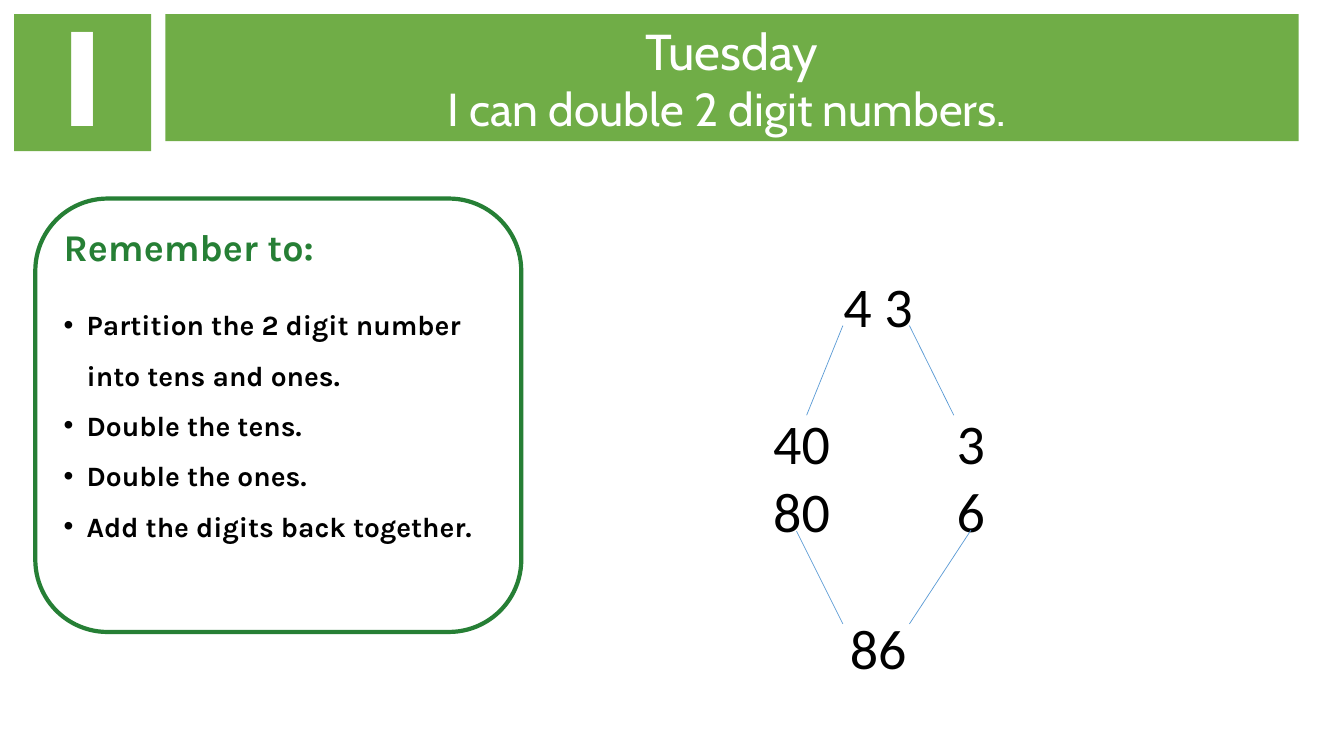
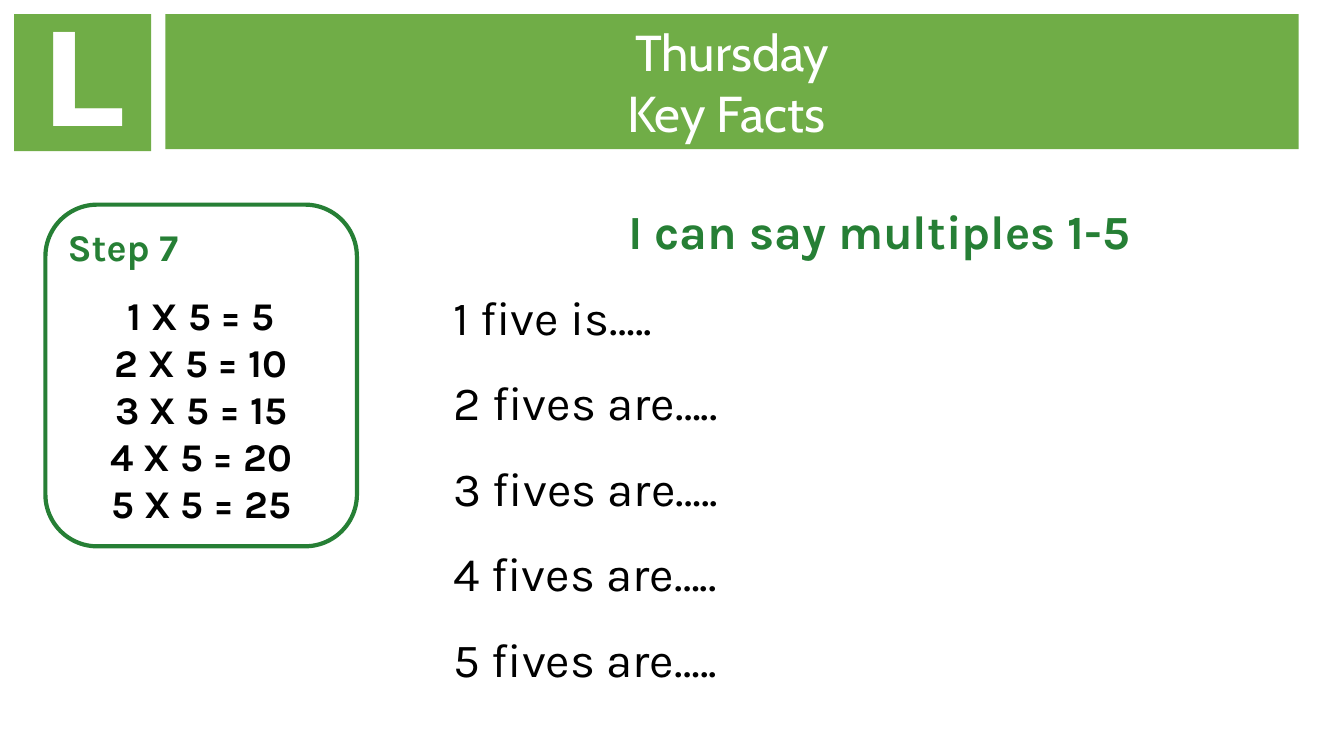
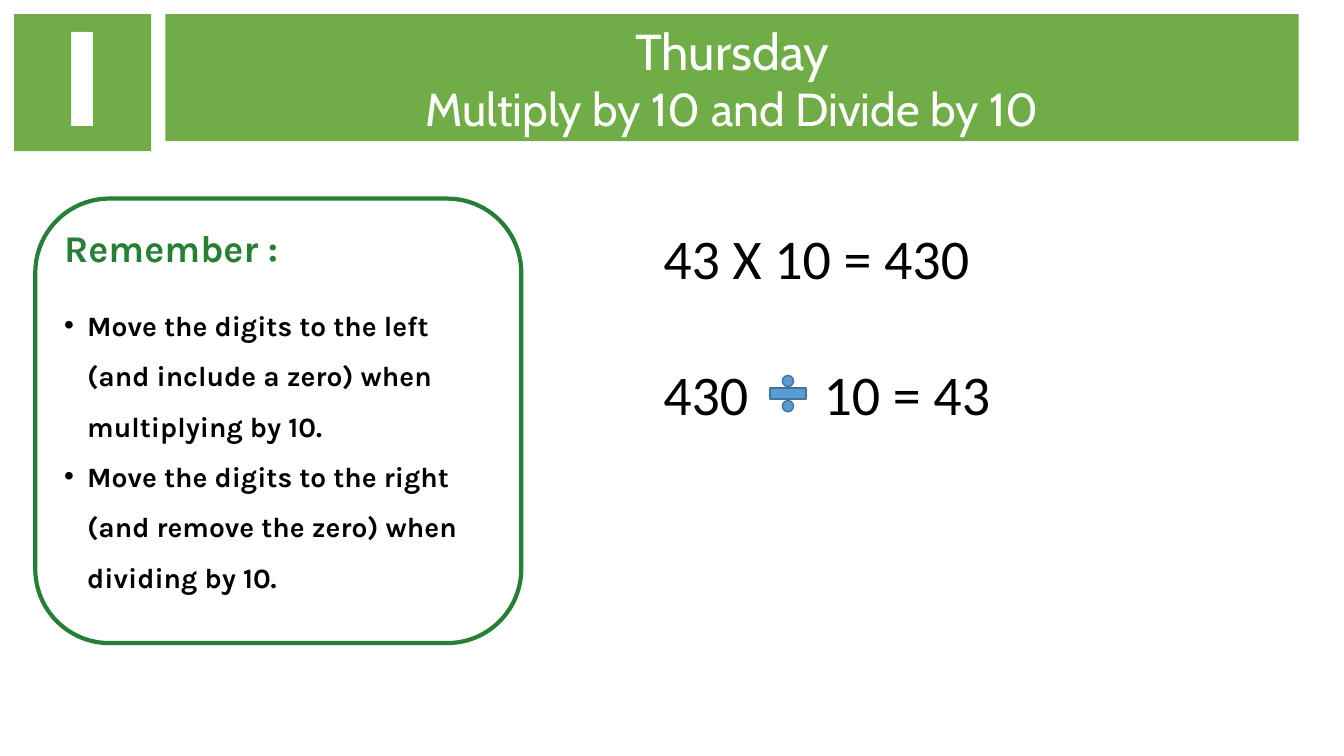
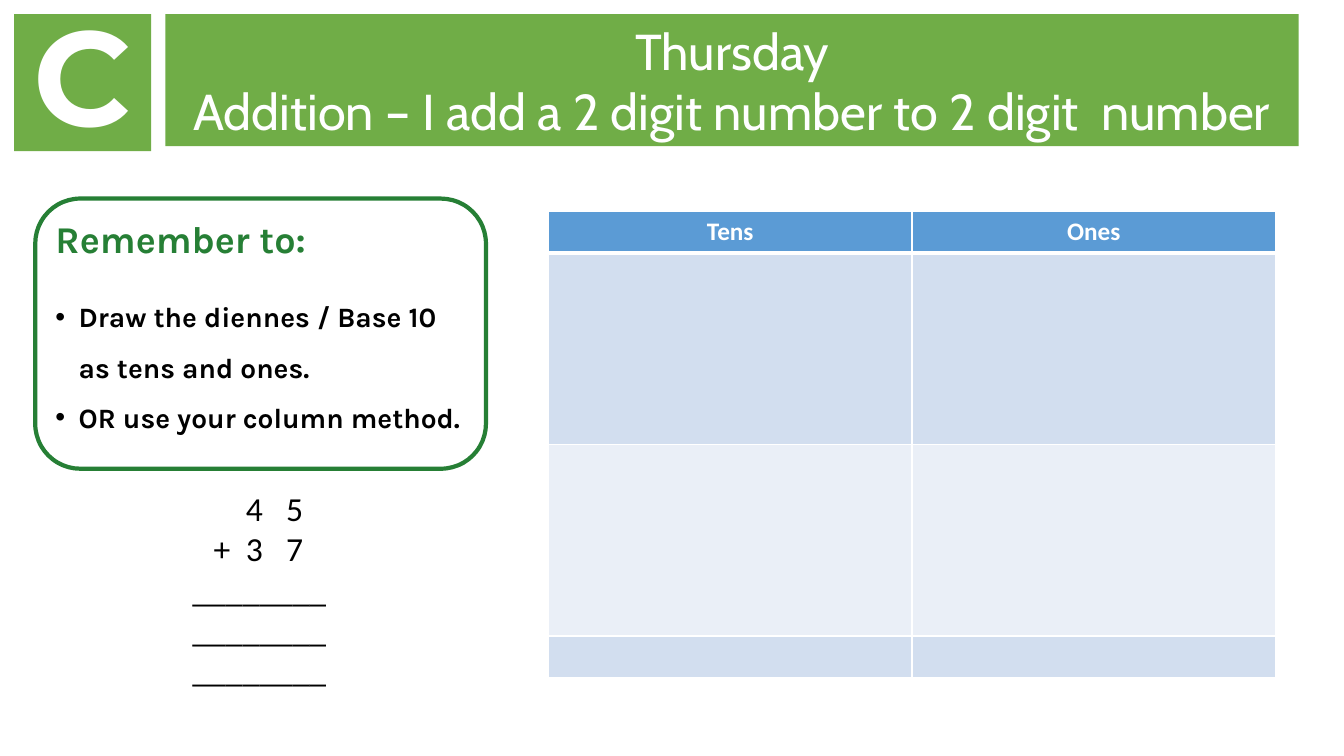
from dataclasses import dataclass

from lxml.etree import SubElement
from pptx import Presentation
from pptx.dml.color import RGBColor
from pptx.enum.shapes import MSO_CONNECTOR, MSO_SHAPE
from pptx.enum.text import MSO_ANCHOR, MSO_AUTO_SIZE, PP_ALIGN
from pptx.oxml.ns import qn
from pptx.util import Inches, Pt


@dataclass(frozen=True)
class Theme:
    band: str = "70AD47"
    accent: str = "267F35"
    blue: str = "5B9BD5"
    blue_edge: str = "43739E"
    row_dark: str = "D2DEEF"
    row_light: str = "EAEFF7"
    white: str = "FFFFFF"
    black: str = "000000"
    letter_font: str = "Montserrat"
    band_font: str = "Cabin"
    panel_font: str = "Karla"
    sum_font: str = "Calibri"
    letter: int = 96
    day: int = 36
    goal_small: int = 33
    heading: int = 27
    bullet: int = 20
    tables_fact: int = 28
    chant: int = 34
    sum: int = 40
    column: int = 24
    cell: int = 18


T = Theme()
LEFT, CENTER = PP_ALIGN.LEFT, PP_ALIGN.CENTER

# Content: letter, day, goal, goal size, band height
HEADERS = {
    "double": ("I", "Tuesday", "I can double 2 digit numbers. ", T.goal_small, 1.26),
    "learn": ("L", "Thursday", "Key Facts ", T.day, 1.34),
    "tens": ("I", "Thursday", "Multiply by 10 and Divide by 10", T.goal_small, 1.26),
    "add": ("C", "Thursday", "Addition – I add a 2 digit number to 2 digit  number", T.day, 1.31),
}

# Content: panel box, heading, lines
PANELS = {
    "double": ((0.35, 1.97, 4.82, 4.3), "Remember to:", [
        "Partition the 2 digit number into tens and ones.",
        "Double the tens.",
        "Double the ones.",
        "Add the digits back together."]),
    "learn": ((0.45, 2.03, 3.09, 3.39), "Step 7",
              [f"{n} X 5 = {n * 5}" for n in range(1, 6)]),
    "tens": ((0.35, 1.97, 4.82, 4.41), "Remember :", [
        "Move the digits to the left (and include a zero) when multiplying by 10.",
        "Move the digits to the right (and remove the zero) when dividing by 10."]),
    "add": ((0.35, 1.97, 4.47, 2.68), "Remember to:", [
        "Draw the diennes / Base 10 as tens and ones.",
        "OR use your column method."]),
}

# Partition diagram: text, centre x, row on the line grid
NUMBERS = [("4 3", 8.71, 0), ("40", 7.95, 2), ("3", 9.63, 2),
           ("80", 7.95, 3), ("6", 9.63, 3), ("86", 8.71, 5)]
BRANCHES = [(8.36, 3.23, 8, 4.12), (9.02, 3.23, 9.46, 4.12),
            (7.9, 5.27, 8.36, 6.19), (9.63, 5.26, 9.02, 6.19)]

CHANT_TITLE = "I can say multiples 1-5"
CHANT = ["1 five is….."] + [f"{n} fives are….." for n in range(2, 6)]
TENS_SUMS = ["43 X 10 = 430", "430\t10 = 43"]
COLUMN_SUM = ["\t\t4\t5", "\t+\t3\t7"] + ["________"] * 3
PLACES = ["Tens", "Ones"]
ROW_HEIGHTS = [0.41, 1.9, 1.9, 0.41]
ROW_FILLS = [T.blue, T.row_dark, T.row_light, T.row_dark]


# Helpers
def rgb(value):
    return RGBColor.from_string(value)


def box(left, top, width, height):
    return [Inches(v) for v in (left, top, width, height)]


def write(tf, lines, size, font, color, bold=False, align=LEFT, spacing=None):
    """Append one paragraph per line and return the new paragraphs."""
    added = []
    for line in lines:
        first = tf.paragraphs[0]
        p = tf.add_paragraph() if first.runs else first
        p.alignment = align
        if spacing:
            p.line_spacing = spacing
        r = p.add_run()
        r.text = line
        r.font.size, r.font.name, r.font.bold = Pt(size), font, bold
        r.font.color.rgb = rgb(color)
        added.append(p)
    return added


def add_bullet(p, indent=0.23):
    pPr = p._p.get_or_add_pPr()
    pPr.set("marL", str(Inches(indent)))
    pPr.set("indent", str(-Inches(indent)))
    SubElement(pPr, qn("a:buFont"), typeface="Arial")
    SubElement(pPr, qn("a:buChar"), char="•")


def add_tabs(p, stops):
    tabs = SubElement(p._p.get_or_add_pPr(), qn("a:tabLst"))
    for stop in stops:
        SubElement(tabs, qn("a:tab"), pos=str(Inches(stop)), algn="l")


def add_shape(s, kind, at, fill, line=None, weight=1):
    sp = s.shapes.add_shape(kind, *box(*at))
    sp.shadow.inherit = False
    sp.fill.solid()
    sp.fill.fore_color.rgb = rgb(fill)
    if line:
        sp.line.color.rgb = rgb(line)
        sp.line.width = Pt(weight)
    else:
        sp.line.fill.background()
    return sp


def add_text(s, at):
    tf = s.shapes.add_textbox(*box(*at)).text_frame
    tf.word_wrap = True
    return tf


def add_line(s, x1, y1, x2, y2):
    line = s.shapes.add_connector(MSO_CONNECTOR.STRAIGHT, *box(x1, y1, x2, y2))
    line.line.color.rgb = rgb(T.blue)
    line.line.width = Pt(0.5)
    SubElement(line._element.spPr, qn("a:effectLst"))


def set_borders(cell, bottom):
    tcPr = cell._tc.get_or_add_tcPr()
    for i, (side, weight) in enumerate((("L", 1), ("R", 1), ("T", 1), ("B", bottom))):
        ln = SubElement(tcPr, qn(f"a:ln{side}"), w=str(Pt(weight)))
        fill = SubElement(ln, qn("a:solidFill"))
        SubElement(fill, qn("a:srgbClr"), val=T.white)
        tcPr.insert(i, ln)


# Parts every slide has
def add_header(s, letter, day, goal, goal_size, height):
    title = s.shapes.title
    title.left, title.top, title.width, title.height = box(0.14, 0.14, 1.36, 1.36)
    title.fill.solid()
    title.fill.fore_color.rgb = rgb(T.band)
    tf = title.text_frame
    tf.auto_size, tf.vertical_anchor = MSO_AUTO_SIZE.NONE, MSO_ANCHOR.MIDDLE
    write(tf, [letter], T.letter, T.letter_font, T.white, True, CENTER, 0.9)

    band = add_shape(s, MSO_SHAPE.RECTANGLE, (1.64, 0.14, 11.24, height), T.band)
    tf = band.text_frame
    tf.vertical_anchor = MSO_ANCHOR.MIDDLE
    for line, size in ((day, T.day), (goal, goal_size)):
        write(tf, [line], size, T.band_font, T.white, align=CENTER)


def add_panel(s, at, heading, lines, bulleted):
    tf = add_shape(s, MSO_SHAPE.ROUNDED_RECTANGLE, at, T.white, T.accent, 3).text_frame
    tf.word_wrap, tf.vertical_anchor = True, MSO_ANCHOR.TOP
    tf.margin_left = tf.margin_right = Inches(0.07)
    tf.margin_top = tf.margin_bottom = Inches(0.04)
    head, = write(tf, [heading], T.heading, T.panel_font, T.accent, True)
    head.space_after = Pt(15.5)
    if bulleted:
        for p in write(tf, lines, T.bullet, T.panel_font, T.black, True, spacing=1.5):
            add_bullet(p)
    else:
        write(tf, lines, T.tables_fact, T.panel_font, T.black, True, CENTER)


# What each slide adds
def draw_double(s):
    top, pitch, width = 2.64, 0.68, 1.4
    for text, center, row in NUMBERS:
        tf = add_text(s, (center - width / 2, top + row * pitch, width, 0.78))
        write(tf, [text], T.sum, T.sum_font, T.black, align=CENTER)
    for branch in BRANCHES:
        add_line(s, *branch)


def draw_learn(s):
    tf = add_text(s, (4.4, 1.67, 8.64, 5.25))
    write(tf, [CHANT_TITLE], T.chant, T.panel_font, T.accent, True, CENTER, 1.5)
    write(tf, CHANT, T.chant, T.panel_font, T.black, spacing=1.5)


def draw_tens(s):
    tf = add_text(s, (6.48, 2.17, 5.01, 2.12))
    _, divide = write(tf, TENS_SUMS, T.sum, T.sum_font, T.black)
    divide.space_before = Pt(49)
    add_tabs(divide, [1.59])
    add_shape(s, MSO_SHAPE.MATH_DIVIDE, (7.57, 3.67, 0.49, 0.47), T.blue, T.blue_edge)


def draw_add(s):
    # Place value table
    at = box(5.44, 2.1, 7.21, sum(ROW_HEIGHTS))
    table = s.shapes.add_table(len(ROW_HEIGHTS), len(PLACES), *at).table
    for i, (height, fill) in enumerate(zip(ROW_HEIGHTS, ROW_FILLS)):
        table.rows[i].height = Inches(height)
        for j, place in enumerate(PLACES):
            cell = table.cell(i, j)
            cell.fill.solid()
            cell.fill.fore_color.rgb = rgb(fill)
            set_borders(cell, 3 if i == 0 else 1)
            if i == 0:
                write(cell.text_frame, [place], T.cell, T.sum_font, T.white, True, CENTER)
    # Column method
    tf = add_text(s, (1.81, 4.79, 1.8, 2.15))
    for p in write(tf, COLUMN_SUM, T.column, T.sum_font, T.black):
        add_tabs(p, [0.21, 0.53, 0.93])


def main():
    prs = Presentation()
    prs.slide_width, prs.slide_height = Inches(13.33), Inches(7.5)
    drawings = {"double": draw_double, "learn": draw_learn,
                "tens": draw_tens, "add": draw_add}
    for name, draw in drawings.items():
        s = prs.slides.add_slide(prs.slide_layouts[5])
        add_header(s, *HEADERS[name])
        add_panel(s, *PANELS[name], bulleted=name != "learn")
        draw(s)
    prs.save("out.pptx")


if __name__ == "__main__":
    main()
